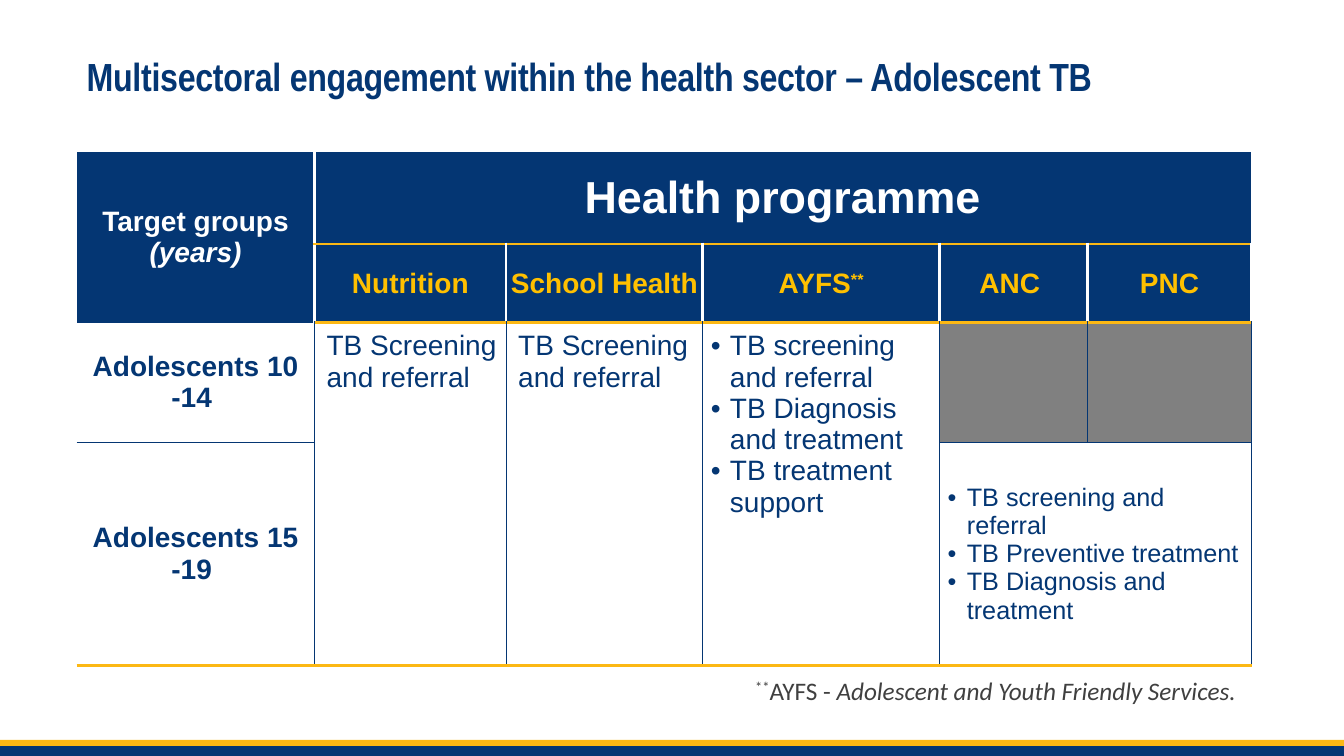
from lxml import etree
from pptx import Presentation
from pptx import util as u
from pptx.dml import color
from pptx.enum import shapes, text
from pptx.oxml import ns

NAVY, GOLD, AMBER = "043673", "FCB814", "FFC000"
WHITE, GREY, DARK = "FFFFFF", "808080", "404040"
MID = text.MSO_ANCHOR.MIDDLE
LEFT, CENTER = text.PP_ALIGN.LEFT, text.PP_ALIGN.CENTER
PLAIN = "{2D5ABB26-0587-4C30-8999-92F81FD0307C}"


def rgb(code):
    return color.RGBColor.from_string(code)


def put(item, vals):
    for name, val in vals.items():
        setattr(item, name, val)


class Page:
    def __init__(self, deck):
        self.slide = deck.slides.add_slide(deck.slide_layouts[5])
        self.font = dict(name="Arial", size=u.Pt(20), bold=False, italic=False)

    def run(self, para, words, tint, raw=None, **look):
        run = para.add_run()
        run.text = words
        put(run.font, {**self.font, **look})
        run.font.color.rgb = rgb(tint)
        for key, val in (raw or {}).items():
            run._r.get_or_add_rPr().set(key, val)

    def fill_text(self, frame, paras, tint, align=LEFT, dots=False, **look):
        """Each paragraph is a list of (words, changes) pairs."""
        for i, runs in enumerate(paras):
            para = frame.paragraphs[0] if i == 0 else frame.add_paragraph()
            para.alignment = align
            if dots:
                props = para._p.get_or_add_pPr()
                gap = u.Inches(0.19)
                props.set("marL", str(gap))
                props.set("indent", str(-gap))
                etree.SubElement(props, ns.qn("a:buFont"), typeface="Arial")
                etree.SubElement(props, ns.qn("a:buChar"), char="•")
            for words, more in runs:
                self.run(para, words, tint, **{**look, **more})

    def title(self, box, words):
        head = self.slide.shapes.title
        put(head, dict(zip(("left", "top", "width", "height"), map(u.Inches, box))))
        put(head.text_frame, dict(vertical_anchor=MID, word_wrap=True))
        self.fill_text(head.text_frame, [[(words, {})]], NAVY, name="Arial Narrow",
                       size=u.Pt(28), bold=True, raw={"spc": "-20"})
        head.text_frame.paragraphs[0].line_spacing = 0.9

    def bar(self, box, tint):
        bar = self.slide.shapes.add_shape(shapes.MSO_SHAPE.RECTANGLE, *map(u.Inches, box))
        bar.shadow.inherit = False
        bar.fill.solid()
        bar.fill.fore_color.rgb = rgb(tint)
        bar.line.fill.background()

    def note(self, box, runs):
        note = self.slide.shapes.add_textbox(*map(u.Inches, box))
        note.text_frame.word_wrap = True
        self.fill_text(note.text_frame, [runs], DARK, name="Calibri", size=u.Pt(18))

    def table(self, left, top, cols, rows):
        frame = self.slide.shapes.add_table(
            len(rows), len(cols), *map(u.Inches, (left, top, sum(cols), sum(rows))))
        self.grid = frame.table
        put(self.grid, dict(first_row=False, horz_banding=False))
        self.grid._tbl.tblPr.find(ns.qn("a:tableStyleId")).text = PLAIN
        for col, wide in zip(self.grid.columns, cols):
            col.width = u.Inches(wide)
        for row, high in zip(self.grid.rows, rows):
            row.height = u.Inches(high)

    def edge(self, cell, side, tint, wide):
        line = etree.SubElement(cell._tc.get_or_add_tcPr(), ns.qn("a:ln" + side),
                                w=str(u.Pt(wide)))
        fill = etree.SubElement(line, ns.qn("a:solidFill"))
        etree.SubElement(fill, ns.qn("a:srgbClr"), val=tint)

    def cell(self, row, col, fill, edges, paras=(), span=(1, 1), pad=(0.08,) * 4,
             tint=NAVY, anchor=MID, **look):
        last = row + span[0] - 1, col + span[1] - 1
        main = self.grid.cell(row, col)
        if span != (1, 1):
            main.merge(self.grid.cell(*last))
        for r in range(row, last[0] + 1):
            for c in range(col, last[1] + 1):
                part = self.grid.cell(r, c)
                for side in "LRTB":
                    if side in edges:
                        self.edge(part, side, *edges[side])
                part.fill.solid()
                part.fill.fore_color.rgb = rgb(fill)
        names = ("margin_left", "margin_right", "margin_top", "margin_bottom")
        put(main, dict(zip(names, map(u.Inches, pad))))
        main.vertical_anchor = anchor
        self.fill_text(main.text_frame, paras, tint, **look)


def lines(*words):
    return [[(word, {})] for word in words]


def main():
    deck = Presentation()
    put(deck, dict(slide_width=u.Inches(13.33), slide_height=u.Inches(7.5)))
    page = Page(deck)

    # Footer stripes and title
    page.bar((0, 7.39, 13.33, 0.11), NAVY)
    page.bar((0, 7.34, 13.33, 0.06), GOLD)
    page.title((0.76, 0.11, 12.46, 1.35),
               "Multisectoral engagement within the health sector – Adolescent TB")

    # Table heads
    page.table(0.76, 1.51, (2.36, 1.9, 1.95, 2.35, 1.47, 1.62), (0.91, 0.78, 1.19, 2.21))
    white, gold, navy = (WHITE, 2.25), (GOLD, 2.25), (NAVY, 1)
    head = dict(tint=WHITE, align=CENTER, bold=True)
    page.cell(0, 0, NAVY, dict(R=white),
              [[("Target groups", {})], [("(years)", dict(italic=True))]],
              span=(2, 1), **head)
    page.cell(0, 1, NAVY, dict(L=white, B=gold), lines("Health programme"),
              span=(1, 5), size=u.Pt(32), **head)
    raised = dict(raw={"baseline": "30000"})
    heads = lines("Nutrition", "School Health ", "AYFS", "ANC ", "PNC")
    heads[2].append(("**", raised))
    for col, runs in enumerate(heads, 1):
        page.cell(1, col, NAVY, dict(L=white, R=white, T=gold), [runs],
                  pad=(0.01, 0.01, 0.01, 0), **{**head, "tint": AMBER})

    # Age groups
    group = dict(align=CENTER, bold=True)
    page.cell(2, 0, WHITE, dict(R=navy, B=navy), lines("Adolescents 10 -14 "), **group)
    page.cell(3, 0, WHITE, dict(R=navy, T=navy, B=gold), lines("Adolescents 15 -19 "), **group)

    # Services
    sides = dict(L=navy, R=navy)
    tall = dict(span=(2, 1), anchor=text.MSO_ANCHOR.TOP)
    for col in (1, 2):
        page.cell(2, col, WHITE, dict(sides, B=gold), lines("TB Screening and referral"),
                  pad=(0.12, 0.08, 0.08, 0.08), **tall)
    page.cell(2, 3, WHITE, dict(sides, B=gold),
              lines("TB screening and referral", "TB Diagnosis and treatment",
                    "TB treatment support"), dots=True, **tall)
    for col in (4, 5):
        page.cell(2, col, GREY, dict(sides, B=navy))
    page.cell(3, 4, WHITE, dict(sides, T=navy, B=gold),
              lines("TB screening and referral", "TB Preventive treatment",
                    "TB Diagnosis and treatment"),
              span=(1, 2), dots=True, size=u.Pt(18))

    # Footnote
    page.note((7.39, 6.65, 5.02, 0.4),
              [("**", raised), ("AYFS - ", {}),
               ("Adolescent and Youth Friendly Services.", dict(italic=True))])
    deck.save("out.pptx")


if __name__ == "__main__":
    main()
